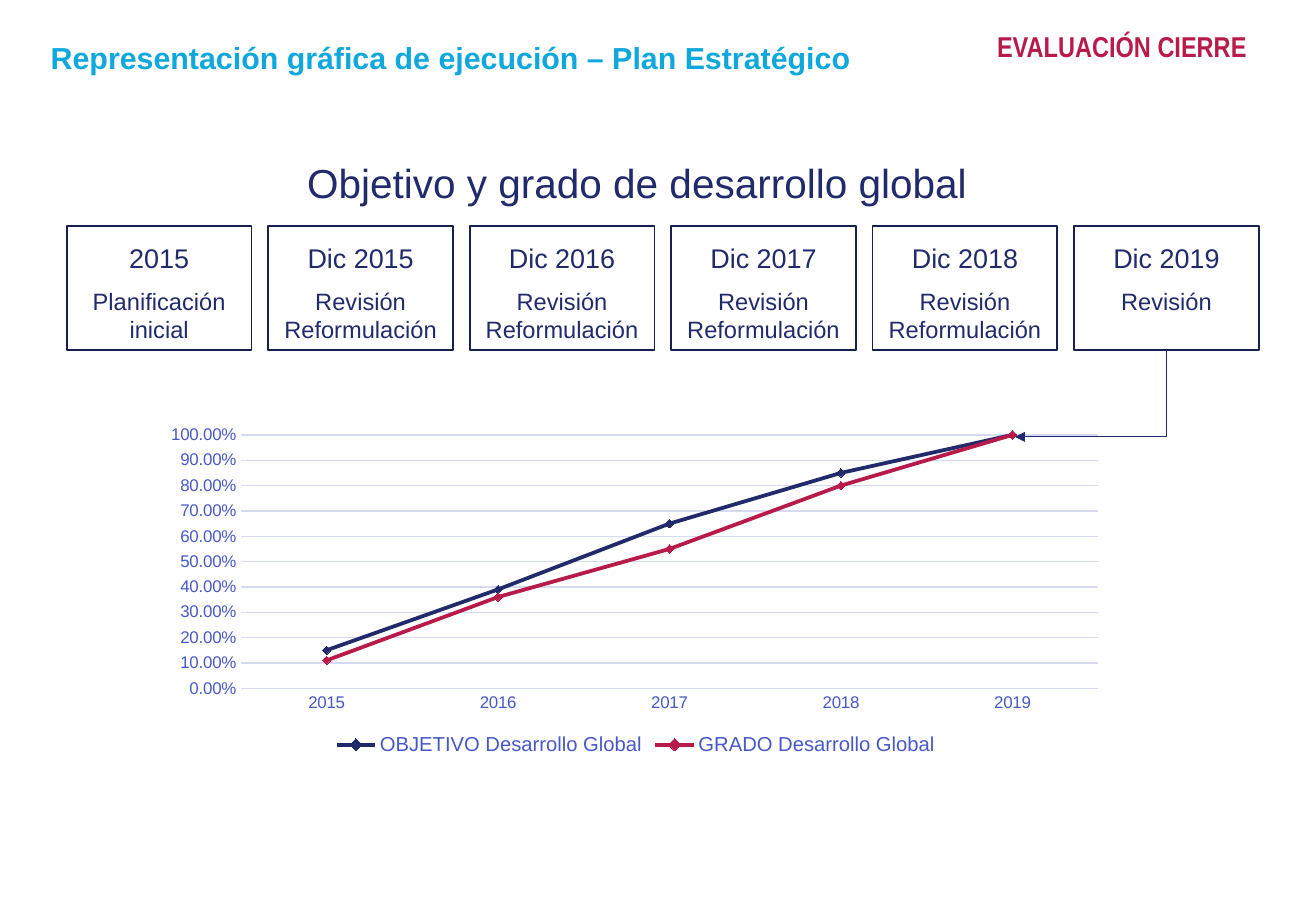
"""Build the slide on target and actual progress of the strategic plan."""
from dataclasses import dataclass

from pptx import Presentation
from pptx.chart.data import CategoryChartData
from pptx.dml.color import RGBColor
from pptx.enum.chart import XL_CHART_TYPE as ChartType
from pptx.enum.chart import XL_LEGEND_POSITION as LegendPosition
from pptx.enum.chart import XL_MARKER_STYLE as Marker
from pptx.enum.chart import XL_TICK_MARK as TickMark
from pptx.enum.shapes import MSO_CONNECTOR as Connector
from pptx.enum.shapes import MSO_SHAPE as Shape
from pptx.enum.text import MSO_ANCHOR as Anchor
from pptx.enum.text import PP_ALIGN as Align
from pptx.oxml import parse_xml
from pptx.oxml.ns import nsdecls, qn
from pptx.util import Pt


@dataclass(frozen=True)
class Theme:
    """Fonts, colours and type sizes of the slide."""

    font: str = "Arial"
    narrow: str = "Arial Narrow"
    navy: RGBColor = RGBColor(0x21, 0x2B, 0x6C)
    border: RGBColor = RGBColor(0x18, 0x20, 0x50)
    crimson: RGBColor = RGBColor(0xB8, 0x1B, 0x49)
    cyan: RGBColor = RGBColor(0x0F, 0xA8, 0xDC)
    label: RGBColor = RGBColor(0x47, 0x58, 0xC7)
    grid: RGBColor = RGBColor(0xD5, 0xD9, 0xF2)
    white: RGBColor = RGBColor(0xFF, 0xFF, 0xFF)
    heading: float = 24
    title: float = 18
    tag: float = 17
    date: float = 16
    action: float = 14
    legend: float = 12
    axis: float = 10


THEME = Theme()
MILESTONES = [
    ("2015", "Planificación inicial"),
    *((f"Dic {year}", "Revisión\nReformulación") for year in range(2015, 2019)),
    ("Dic 2019", "Revisión"),
]
YEARS = ["2015", "2016", "2017", "2018", "2019"]
PROGRESS = [
    ("OBJETIVO Desarrollo Global", (0.15, 0.39, 0.65, 0.85, 1), THEME.navy),
    ("GRADO Desarrollo Global", (0.11, 0.36, 0.55, 0.8, 1), THEME.crimson),
]
BOX_LEFT, BOX_TOP, BOX_WIDTH, BOX_HEIGHT, BOX_PITCH = 39.6, 134, 109.5, 73.4, 119.4


def style_font(font, size, color, name=THEME.font, bold=False):
    """Set the face, size, colour and weight of a font."""
    font.name, font.size, font.bold = name, Pt(size), bold
    font.color.rgb = color


def add_text(slide, text, left, top, width, height, *, size, color=THEME.navy,
             name=THEME.font, bold=False, align=Align.LEFT, anchor=Anchor.TOP,
             wrap=True, spacing=None, inset=None):
    """Add a text box with one paragraph for each line of text."""
    frame = slide.shapes.add_textbox(
        Pt(left), Pt(top), Pt(width), Pt(height)).text_frame
    frame.word_wrap, frame.vertical_anchor = wrap, anchor
    if inset is not None:
        frame.margin_left = frame.margin_right = Pt(inset)
        frame.margin_top = frame.margin_bottom = Pt(inset)
    frame.text = text
    for paragraph in frame.paragraphs:
        paragraph.alignment, paragraph.line_spacing = align, spacing
        for run in paragraph.runs:
            style_font(run.font, size, color, name, bold)


def add_milestone(slide, left, date, action):
    """Add a framed milestone and return its frame."""
    frame = slide.shapes.add_shape(
        Shape.RECTANGLE, Pt(left), Pt(BOX_TOP), Pt(BOX_WIDTH), Pt(BOX_HEIGHT))
    frame.shadow.inherit = False
    frame.fill.solid()
    frame.fill.fore_color.rgb = THEME.white
    frame.line.color.rgb, frame.line.width = THEME.border, Pt(1)
    add_text(slide, date, left, 139.7, BOX_WIDTH, 26.6,
             size=THEME.date, align=Align.CENTER)
    add_text(slide, action, left, 166.3, BOX_WIDTH, 41,
             size=THEME.action, align=Align.CENTER)
    return frame


def add_elbow_arrow(slide, source, end_x, end_y):
    """Add an arrow that drops from a frame and then runs left to a point."""
    start_x, start_y = BOX_LEFT + 5 * BOX_PITCH + BOX_WIDTH / 2, BOX_TOP + BOX_HEIGHT
    drop, run = end_y - start_y, start_x - end_x
    arrow = slide.shapes.add_connector(
        Connector.ELBOW, Pt(start_x), Pt(start_y), Pt(end_x), Pt(end_y))
    arrow.begin_connect(source, 2)
    properties = arrow._element.spPr
    transform = properties.find(qn("a:xfrm"))
    transform.attrib.pop("flipH", None)
    transform.set("rot", "5400000")
    properties.find(qn("a:prstGeom")).set("prst", "bentConnector2")
    arrow.left, arrow.top = Pt((start_x + end_x - drop) / 2), Pt((start_y + end_y - run) / 2)
    arrow.width, arrow.height = Pt(drop), Pt(run)
    arrow.line.color.rgb, arrow.line.width = THEME.navy, Pt(0.5)
    arrow.line._get_or_add_ln().append(
        parse_xml(f'<a:tailEnd {nsdecls("a")} type="triangle"/>'))
    properties.append(parse_xml(f'<a:effectLst {nsdecls("a")}/>'))


def place_plot(chart, x, y, w, h):
    """Fix the inner plot area as fractions of the chart."""
    plot_area = chart._chartSpace.chart.plotArea
    for layout in plot_area.findall(qn("c:layout")):
        plot_area.remove(layout)
    sizes = "".join(f'<c:{key} val="{value}"/>'
                    for key, value in (("x", x), ("y", y), ("w", w), ("h", h)))
    plot_area.insert(0, parse_xml(
        f'<c:layout {nsdecls("c")}><c:manualLayout><c:layoutTarget val="inner"/>'
        f'<c:xMode val="edge"/><c:yMode val="edge"/>{sizes}'
        '</c:manualLayout></c:layout>'))


def style_axes(chart):
    """Format both axes and the gridlines."""
    years, share = chart.category_axis, chart.value_axis
    for axis in (years, share):
        axis.major_tick_mark = axis.minor_tick_mark = TickMark.NONE
        style_font(axis.tick_labels.font, THEME.axis, THEME.label)
    share.minimum_scale, share.maximum_scale, share.major_unit = 0, 1, 0.1
    share.tick_labels.number_format = "0.00%"
    share.tick_labels.number_format_is_linked = False
    share.format.line.fill.background()
    share.has_major_gridlines = True
    for line in (years.format.line, share.major_gridlines.format.line):
        line.color.rgb, line.width = THEME.grid, Pt(0.75)


def add_progress_chart(slide):
    """Add the line chart of target and actual progress."""
    progress = CategoryChartData(number_format="0.00%")
    progress.categories = YEARS
    for name, values, _ in PROGRESS:
        progress.add_series(name, values)
    chart = slide.shapes.add_chart(
        ChartType.LINE_MARKERS, Pt(91.4), Pt(247.7), Pt(571), Pt(203), progress).chart
    chart.has_title = False
    style_font(chart.font, THEME.axis, THEME.navy)
    chart.has_legend = True
    chart.legend.position = LegendPosition.BOTTOM
    chart.legend.include_in_layout = False
    style_font(chart.legend.font, THEME.legend, THEME.label)
    style_axes(chart)
    place_plot(chart, 0.09, 0.05, 0.89, 0.74)
    chart.plots[0].vary_by_categories = False
    for series, (_, _, color) in zip(chart.plots[0].series, PROGRESS):
        series.smooth = False
        series.format.line.color.rgb, series.format.line.width = color, Pt(2.25)
        series.marker.style, series.marker.size = Marker.DIAMOND, 5
        series.marker.format.fill.solid()
        series.marker.format.fill.fore_color.rgb = color
        series.marker.format.line.color.rgb = color


def main():
    """Build the slide and save it."""
    deck = Presentation()
    deck.slide_width, deck.slide_height = Pt(780), Pt(540)
    slide = deck.slides.add_slide(deck.slide_layouts[6])
    add_text(slide, "EVALUACIÓN CIERRE", 575.3, 13, 179.3, 24.5, size=THEME.tag,
             color=THEME.crimson, name=THEME.narrow, bold=True,
             align=Align.CENTER, anchor=Anchor.BOTTOM, inset=0)
    add_text(slide, "Representación gráfica de ejecución – Plan Estratégico",
             23, 22.3, 532, 21.6, size=THEME.title, color=THEME.cyan,
             bold=True, spacing=0.9)
    add_text(slide, "Objetivo y grado de desarrollo global",
             175, 90, 409.7, 36, size=THEME.heading, wrap=False)
    add_progress_chart(slide)
    frames = [add_milestone(slide, BOX_LEFT + i * BOX_PITCH, date, action)
              for i, (date, action) in enumerate(MILESTONES)]
    add_elbow_arrow(slide, frames[-1], 601.5, 259)
    deck.save("out.pptx")


if __name__ == "__main__":
    main()
